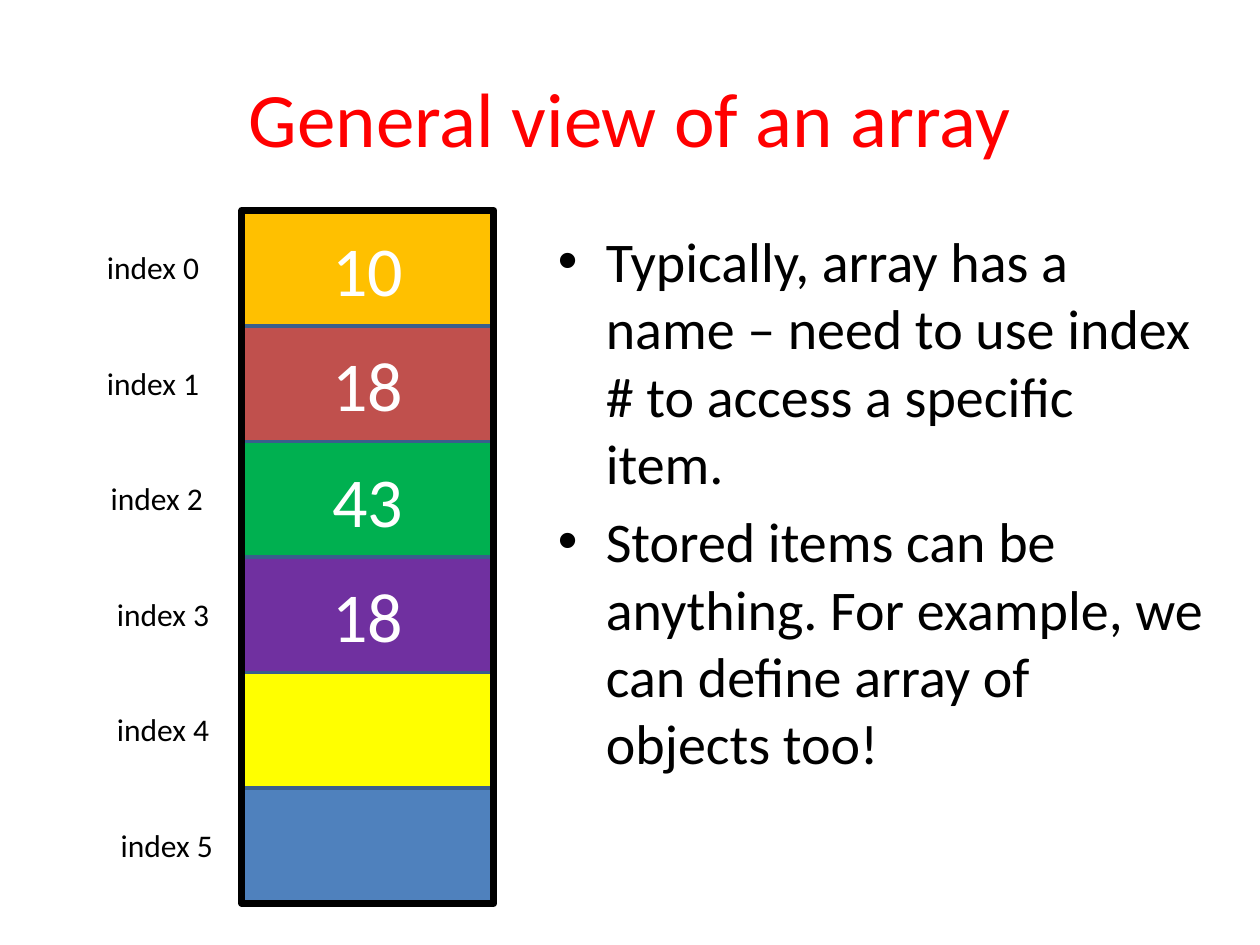
from dataclasses import dataclass

from lxml import etree
from pptx import Presentation
from pptx.dml.color import RGBColor
from pptx.enum.shapes import MSO_SHAPE
from pptx.enum.text import MSO_ANCHOR, MSO_AUTO_SIZE, PP_ALIGN
from pptx.oxml.ns import qn
from pptx.util import Inches, Pt

RECTANGLE = MSO_SHAPE.RECTANGLE
MIDDLE = MSO_ANCHOR.MIDDLE
TOP = MSO_ANCHOR.TOP
CENTER = PP_ALIGN.CENTER
LEFT = PP_ALIGN.LEFT
FIT_SHAPE = MSO_AUTO_SIZE.SHAPE_TO_FIT_TEXT


@dataclass(frozen=True)
class Theme:
    """Colours, font and type sizes of the slide."""
    font: str = "Calibri"
    title_color: str = "FF0000"
    text_color: str = "000000"
    value_color: str = "FFFFFF"
    cell_line: str = "3A5F8C"
    frame_line: str = "000000"
    title_size: int = 44
    body_size: int = 32
    value_size: int = 40
    label_size: int = 18


THEME = Theme()
TITLE = "General view of an array"
BULLETS = (
    "Typically, array has a name – need to use index # to access a specific item.",
    "Stored items can be anything. For example, we can define array of objects too!",
)
CELLS = (
    ("10", "FFC000", 0.75),
    ("18", "C0504D", 0.75),
    ("43", "00B050", 0.78),
    ("18", "7030A0", 0.83),
    ("", "FFFF00", 0.83),
    ("", "4F81BD", 0.86),
)
ARRAY_LEFT, ARRAY_TOP, ARRAY_WIDTH, ARRAY_HEIGHT = 1.92, 1.67, 2, 5.5
CELL_HEIGHT = ARRAY_HEIGHT / len(CELLS)
LABEL_OFFSET = 0.25


def write_run(paragraph, text, size, color, alignment=LEFT):
    """Add one formatted run to an aligned paragraph."""
    paragraph.alignment = alignment
    run = paragraph.add_run()
    run.text = text
    run.font.name = THEME.font
    run.font.size = Pt(size)
    run.font.color.rgb = RGBColor.from_string(color)


def add_text_frame(slide, left, top, width, height, wrap=True, anchor=TOP):
    """Add a text box and return its text frame."""
    box = slide.shapes.add_textbox(Inches(left), Inches(top), Inches(width), Inches(height))
    frame = box.text_frame
    frame.word_wrap = wrap
    frame.vertical_anchor = anchor
    return frame


def add_rectangle(slide, top, height, line_color, line_width, fill_color=None):
    """Add a rectangle as wide as the array, hollow when it has no fill colour."""
    shape = slide.shapes.add_shape(
        RECTANGLE, Inches(ARRAY_LEFT), Inches(top), Inches(ARRAY_WIDTH), Inches(height))
    shape.shadow.inherit = False
    shape.line.color.rgb = RGBColor.from_string(line_color)
    shape.line.width = Pt(line_width)
    if fill_color:
        shape.fill.solid()
        shape.fill.fore_color.rgb = RGBColor.from_string(fill_color)
    else:
        shape.fill.background()
    return shape


def add_title(slide):
    """Add the centred slide title."""
    frame = add_text_frame(slide, 0.5, 0.3, 9, 1.25, anchor=MIDDLE)
    write_run(frame.paragraphs[0], TITLE, THEME.title_size, THEME.title_color, CENTER)


def set_bullet(paragraph):
    """Give a paragraph a round bullet with a hanging indent."""
    properties = paragraph._p.get_or_add_pPr()
    properties.set("marL", str(Inches(0.38)))
    properties.set("indent", str(Inches(-0.38)))
    etree.SubElement(properties, qn("a:buFont"), typeface="Arial")
    etree.SubElement(properties, qn("a:buChar"), char="•")


def add_bullets(slide):
    """Add the bulleted explanation."""
    frame = add_text_frame(slide, 4.33, 1.75, 5.33, 5.42)
    for number, text in enumerate(BULLETS):
        paragraph = frame.add_paragraph() if number else frame.paragraphs[0]
        paragraph.space_before = Pt(THEME.body_size * 0.2)
        set_bullet(paragraph)
        write_run(paragraph, text, THEME.body_size, THEME.text_color)


def add_cell(slide, top, value, color):
    """Add one array cell with its value."""
    shape = add_rectangle(slide, top, CELL_HEIGHT, THEME.cell_line, 2, color)
    if value:
        frame = shape.text_frame
        frame.vertical_anchor = MIDDLE
        write_run(frame.paragraphs[0], value, THEME.value_size, THEME.value_color, CENTER)


def add_label(slide, left, top, index):
    """Add the index label beside a cell."""
    frame = add_text_frame(slide, left, top, 0.94, 0.4, wrap=False)
    frame.auto_size = FIT_SHAPE
    write_run(frame.paragraphs[0], f"index {index}", THEME.label_size, THEME.text_color)


def add_array(slide):
    """Add the labelled cells and the frame around them."""
    for index, (value, color, label_left) in enumerate(CELLS):
        top = ARRAY_TOP + index * CELL_HEIGHT
        add_cell(slide, top, value, color)
        add_label(slide, label_left, top + LABEL_OFFSET, index)
    add_rectangle(slide, ARRAY_TOP, ARRAY_HEIGHT, THEME.frame_line, 4)


def main():
    """Build the slide and save it."""
    presentation = Presentation()
    presentation.slide_width = Inches(10)
    presentation.slide_height = Inches(7.5)
    slide = presentation.slides.add_slide(presentation.slide_layouts[6])
    add_title(slide)
    add_bullets(slide)
    add_array(slide)
    presentation.save("out.pptx")


if __name__ == "__main__":
    main()
